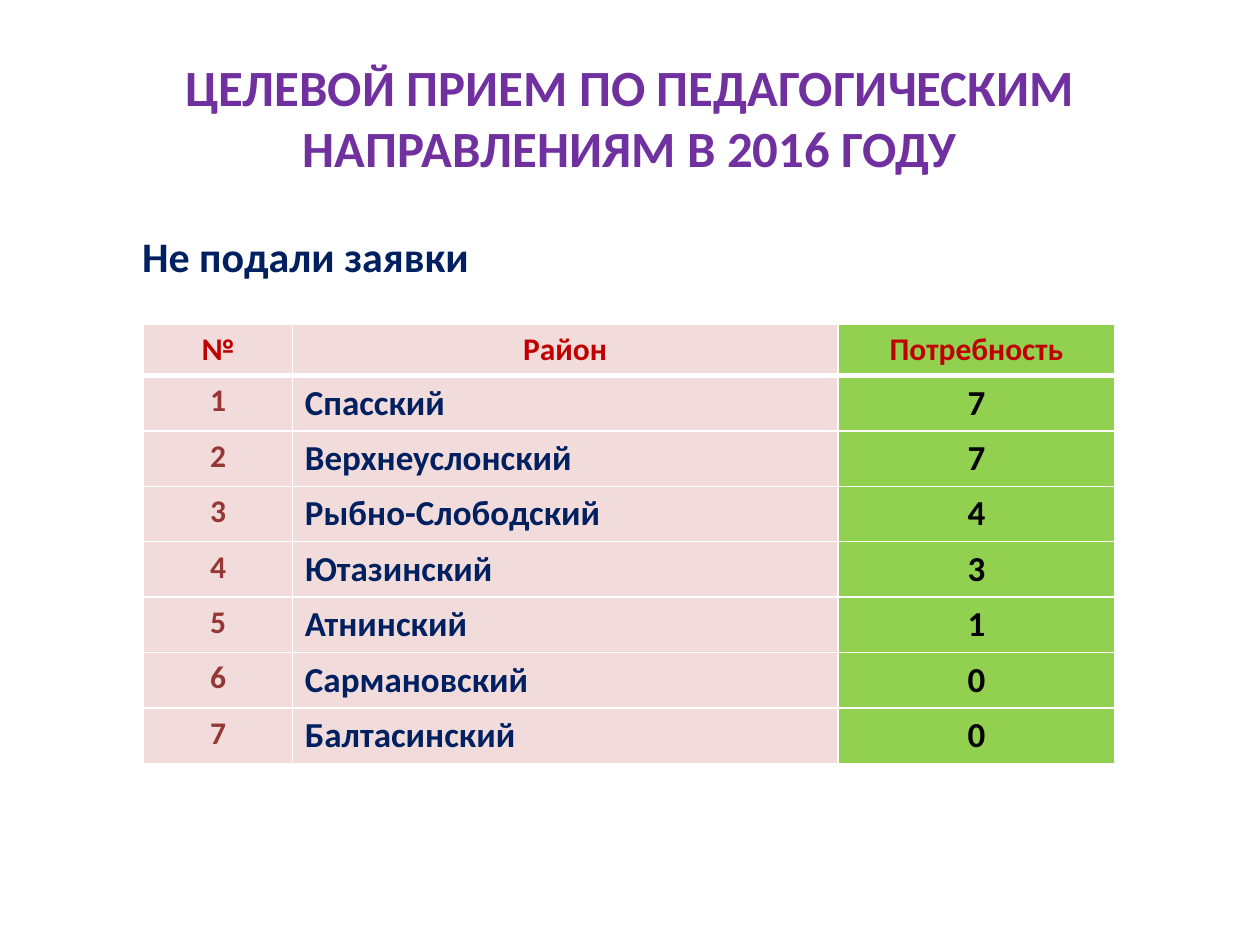
import pptx
import pptx.util
import pptx.dml.color
import pptx.enum.text
import pptx.oxml
from lxml import etree

Inches, Pt = pptx.util.Inches, pptx.util.Pt
RGBColor = pptx.dml.color.RGBColor
ALIGN = pptx.enum.text.PP_ALIGN
ANCHOR = pptx.enum.text.MSO_ANCHOR

PURPLE = RGBColor(0x70, 0x30, 0xA0)
NAVY = RGBColor(0x00, 0x20, 0x60)
RED = RGBColor(0xC0, 0x00, 0x00)
BROWN = RGBColor(0x95, 0x37, 0x35)
BLACK = RGBColor(0x00, 0x00, 0x00)
WHITE = RGBColor(0xFF, 0xFF, 0xFF)
PINK = RGBColor(0xF2, 0xDC, 0xDB)
GREEN = RGBColor(0x92, 0xD0, 0x50)

HEADER = ("№", "Район", "Потребность")
NEEDS = [("Спасский", 7), ("Верхнеуслонский", 7), ("Рыбно-Слободский", 4),
         ("Ютазинский", 3), ("Атнинский", 1), ("Сармановский", 0),
         ("Балтасинский", 0)]
COLUMN_WIDTHS = (1.18, 4.33, 2.2)
COLUMN_FILLS = (PINK, PINK, GREEN)
HEADER_STYLE = (18, RED, ALIGN.CENTER)
BODY_STYLES = ((18, BROWN, ALIGN.CENTER), (20, NAVY, ALIGN.LEFT),
               (20, BLACK, ALIGN.CENTER))


class SlideBuilder:
    font_name = "Calibri"

    def __init__(self, slide):
        self.s = slide

    def fill_text(self, tf, text, size, color, align):
        p = tf.paragraphs[0]
        p.text = text
        p.alignment = align
        font = {"name": self.font_name, "size": Pt(size), "bold": True}
        for r in p.runs:
            for key, value in font.items():
                setattr(r.font, key, value)
            r.font.color.rgb = color

    def text(self, box, text, size, color, align, anchor=ANCHOR.TOP):
        sp = self.s.shapes.add_textbox(*map(Inches, box))
        tf = sp.text_frame
        tf.word_wrap = True
        tf.vertical_anchor = anchor
        self.fill_text(tf, text, size, color, align)

    def borders(self, cell, bottom, top):
        """Draw white cell borders; top and bottom widths are in points."""
        tcPr = cell._tc.get_or_add_tcPr()
        widths = {"lnL": 1, "lnR": 1, "lnT": top, "lnB": bottom}
        for i, (side, width) in enumerate(widths.items()):
            ln = etree.Element(pptx.oxml.ns.qn("a:" + side), w=str(Pt(width)))
            fill = etree.SubElement(ln, pptx.oxml.ns.qn("a:solidFill"))
            etree.SubElement(fill, pptx.oxml.ns.qn("a:srgbClr"), val=str(WHITE))
            tcPr.insert(i, ln)

    def table(self, left, top, rows, header_height, row_height):
        heights = [header_height] + [row_height] * (len(rows) - 1)
        frame = self.s.shapes.add_table(
            len(rows), len(COLUMN_WIDTHS), Inches(left), Inches(top),
            Inches(sum(COLUMN_WIDTHS)), Inches(sum(heights)))
        table = frame.table
        for column, width in zip(table.columns, COLUMN_WIDTHS):
            column.width = Inches(width)
        for i, (values, height) in enumerate(zip(rows, heights)):
            table.rows[i].height = Inches(height)
            for j, value in enumerate(values):
                cell = table.cell(i, j)
                cell.fill.solid()
                cell.fill.fore_color.rgb = COLUMN_FILLS[j]
                style = BODY_STYLES[j] if i else HEADER_STYLE
                self.fill_text(cell.text_frame, str(value), *style)
                self.borders(cell, bottom=1 if i else 3, top=3 if i == 1 else 1)


def main():
    prs = pptx.Presentation()
    prs.slide_width, prs.slide_height = Inches(10), Inches(7.5)
    slide = SlideBuilder(prs.slides.add_slide(prs.slide_layouts[6]))
    slide.text((0.5, 0.3, 9, 1.25),
               "ЦЕЛЕВОЙ ПРИЕМ ПО ПЕДАГОГИЧЕСКИМ\vНАПРАВЛЕНИЯМ В 2016 ГОДУ",
               29, PURPLE, ALIGN.CENTER, ANCHOR.MIDDLE)
    rows = [HEADER] + [(n, *need) for n, need in enumerate(NEEDS, 1)]
    slide.table(1.14, 2.57, rows, 0.41, 0.44)
    slide.text((1.03, 1.78, 8.14, 0.5), "Не подали заявки",
               24, NAVY, ALIGN.JUSTIFY)
    prs.save("out.pptx")


if __name__ == "__main__":
    main()
